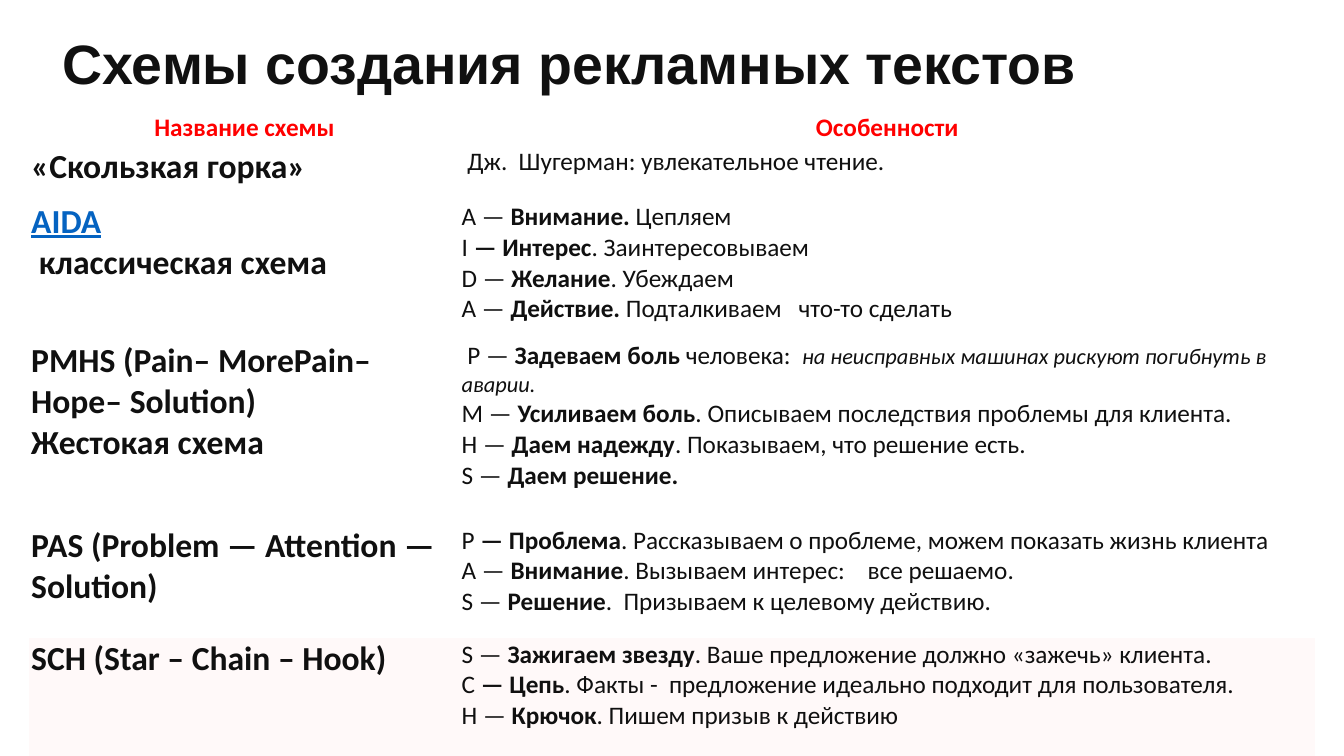
import pptx
import pptx.dml.color
import pptx.enum.text
import pptx.util

Inches, Pt = pptx.util.Inches, pptx.util.Pt
PP_ALIGN = pptx.enum.text.PP_ALIGN

INK, RED, LINK, BLUSH = "101010", "FF0000", "0563C1", "FFF9F9"
COLUMN_WIDTHS = [4.27, 8.48]
HEADINGS = ["Название схемы", "Особенности"]
HEADING_HEIGHT = 0.33

# Row height, scheme name lines, feature lines.
# In features *...* is bold, and a part starting with _ is smaller italic.
SCHEMES = [
    (0.55, ["«Скользкая горка»"], [" Дж.  Шугерман: увлекательное чтение."]),
    (1.38, ["AIDA", " классическая схема"], [
        "А — *Внимание.* Цепляем",
        "I *— Интерес*. Заинтересовываем",
        "D — *Желание*. Убеждаем",
        "A — *Действие.* Подталкиваем   что-то сделать"]),
    (1.83, ["PMHS (Pain– MorePain– Hope– Solution)", "Жестокая схема"], [
        " P — *Задеваем боль *человека:  "
        "**_на неисправных машинах рискуют погибнуть в аварии.",
        "M — *Усиливаем боль*. Описываем последствия проблемы для клиента.",
        "H — *Даем надежду*. Показываем, что решение есть.",
        "S — *Даем решение.*"]),
    (1.13, ["РАS (Problem — Attention — Solution)"], [
        "P *— Проблема*. Рассказываем о проблеме, можем показать жизнь клиента",
        "A — *Внимание*. Вызываем интерес:    все решаемо.",
        "S — *Решение*.  Призываем к целевому действию."]),
    (1.22, ["SCH (Star – Chain – Hook)"], [
        "S — *Зажигаем звезду*. Ваше предложение должно «зажечь» клиента.",
        "C *— Цепь*. Факты -  предложение идеально подходит для пользователя.",
        "H — *Крючок*. Пишем призыв к действию"]),
]


def rgb(color):
    return pptx.dml.color.RGBColor.from_string(color)


def add_run(p, text, size, color=INK, bold=False, italic=False, font="Calibri"):
    r = p.add_run()
    r.text = text
    r.font.name, r.font.size = font, Pt(size)
    r.font.bold, r.font.italic = bold, italic
    r.font.color.rgb = rgb(color)
    return r


def add_paragraphs(tf, lines):
    """Yield a paragraph of the text frame with each line."""
    for i, line in enumerate(lines):
        yield (tf.add_paragraph() if i else tf.paragraphs[0]), line


def add_title(s, left, top, width, height):
    box = s.shapes.add_textbox(*map(Inches, (left, top, width, height)))
    tf = box.text_frame
    tf.word_wrap = True
    tf.vertical_anchor = pptx.enum.text.MSO_ANCHOR.MIDDLE
    add_run(tf.paragraphs[0], "Схемы создания рекламных текстов", 39.6,
            bold=True, font="Arial")


def fill_name(cell, lines):
    for p, line in add_paragraphs(cell.text_frame, lines):
        is_link = line == "AIDA"
        r = add_run(p, line, 24, LINK if is_link else INK, bold=True)
        r.font.underline = is_link


def fill_features(cell, lines):
    for p, line in add_paragraphs(cell.text_frame, lines):
        for i, part in enumerate(line.split("*")):
            italic = part.startswith("_")
            if part:
                add_run(p, part.lstrip("_"), 16 if italic else 18,
                        bold=i % 2 == 1, italic=italic)


def style_cell(cell, fill):
    cell.margin_left = cell.margin_right = Inches(0.02)
    cell.margin_top = cell.margin_bottom = Inches(0.01)
    if fill:
        cell.fill.solid()
        cell.fill.fore_color.rgb = rgb(fill)
    else:
        cell.fill.background()


def add_scheme_table(s, left, top):
    heights = [HEADING_HEIGHT] + [height for height, _, _ in SCHEMES]
    frame = s.shapes.add_table(
        len(heights), len(COLUMN_WIDTHS), Inches(left), Inches(top),
        Inches(sum(COLUMN_WIDTHS)), Inches(sum(heights)))
    table = frame.table
    table.first_row = table.horz_banding = False
    for column, width in zip(table.columns, COLUMN_WIDTHS):
        column.width = Inches(width)
    for i, height in enumerate(heights):
        table.rows[i].height = Inches(height)
        for cell in table.rows[i].cells:
            style_cell(cell, BLUSH if i == len(SCHEMES) else None)
    for cell, heading in zip(table.rows[0].cells, HEADINGS):
        p = cell.text_frame.paragraphs[0]
        p.alignment = PP_ALIGN.CENTER
        add_run(p, heading, 18, RED, bold=True)
    for i, (_, name, features) in enumerate(SCHEMES, 1):
        fill_name(table.cell(i, 0), name)
        fill_features(table.cell(i, 1), features)
    # The "No Style, No Grid" table style leaves the cells without borders.
    style = frame._element.xpath(".//a:tableStyleId")[0]
    style.text = "{2D5ABB26-0587-4C30-8999-92F81FD0307C}"


def main():
    prs = pptx.Presentation()
    prs.slide_width, prs.slide_height = Inches(13.33), Inches(7.5)
    s = prs.slides.add_slide(prs.slide_layouts[6])
    add_title(s, 0.52, 0, 12.51, 1.24)
    add_scheme_table(s, 0.29, 1.11)
    prs.save("out.pptx")


if __name__ == "__main__":
    main()
